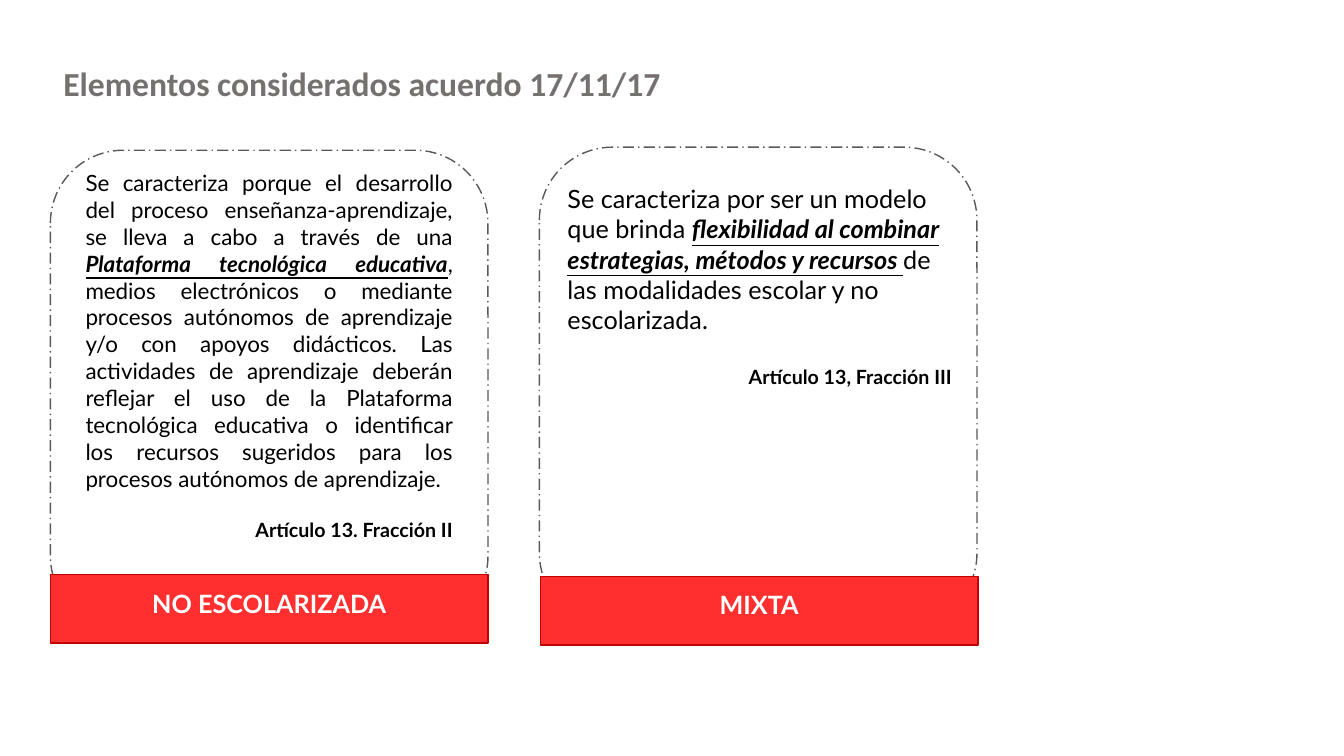
"""Build the slide comparing the two study modalities of agreement 17/11/17."""
import lxml.etree
import pptx
import pptx.dml.color
import pptx.enum.dml
import pptx.enum.shapes
import pptx.enum.text
import pptx.util
from pptx.util import Inches

ALIGN = pptx.enum.text.PP_ALIGN
SHAPE = pptx.enum.shapes.MSO_SHAPE
DASH = pptx.enum.dml.MSO_LINE
THEME = {
    "title": {"name": "Calibri", "size": 24, "color": "767171", "bold": True},
    "label": {"name": "Lato", "size": 18, "color": "FFFFFF", "bold": True},
    "body": {"name": "Lato", "color": "000000"},
    "emphasis": {"name": "Lato", "color": "000000", "bold": True, "italic": True, "underline": True},
    "citation": {"name": "Lato", "size": 14, "color": "000000", "bold": True},
    "card_line": "595959",
    "band_fill": "FF2F2F",
    "band_line": "C00000",
}
CARD_WIDTH, CARD_HEIGHT, BAND_HEIGHT = 4.34, 4.75, 0.68

modalities = [
    {
        "label": "NO ESCOLARIZADA",
        "card": (0.5, 1.49),
        "band": (0.5, 5.7),
        "label_top": 5.79,
        "text_box": (0.75, 1.63, 3.84, 4.11),
        "size": 16,
        "align": ALIGN.JUSTIFY,
        "gap": 19,
        "runs": [
            ("Se caracteriza porque el desarrollo del proceso enseñanza-aprendizaje, se lleva a cabo a través de una ", "body"),
            ("Plataforma tecnológica educativa", "emphasis"),
            (", medios electrónicos o mediante procesos autónomos de aprendizaje y/o con apoyos didácticos. "
             "Las actividades de aprendizaje deberán reflejar el uso de la Plataforma tecnológica educativa "
             "o identificar los recursos sugeridos para los procesos autónomos de aprendizaje.", "body"),
        ],
        "citation": "Artículo 13. Fracción II",
    },
    {
        "label": "MIXTA",
        "card": (5.35, 1.46),
        "band": (5.36, 5.72),
        "label_top": 5.8,
        "text_box": (5.53, 1.77, 4.01, 2.76),
        "size": 18,
        "align": ALIGN.LEFT,
        "gap": 21.5,
        "runs": [
            ("Se caracteriza por ser un modelo que brinda ", "body"),
            ("flexibilidad al combinar estrategias, métodos y recursos ", "emphasis"),
            ("de las modalidades escolar y no escolarizada.", "body"),
        ],
        "citation": "Artículo 13, Fracción III",
    },
]

presentation = pptx.Presentation()
presentation.slide_width = Inches(13.33)
presentation.slide_height = Inches(7.5)
slide = presentation.slides.add_slide(presentation.slide_layouts[6])


def add_text(box, paragraphs):
    """Add a wrapped text box from (alignment, gap before, runs) entries."""
    frame = slide.shapes.add_textbox(*map(Inches, box)).text_frame
    frame.word_wrap = True
    for index, (alignment, gap, runs) in enumerate(paragraphs):
        paragraph = frame.add_paragraph() if index else frame.paragraphs[0]
        paragraph.alignment = alignment
        if gap:
            paragraph.space_before = pptx.util.Pt(gap)
        for text, values in runs:
            run = paragraph.add_run()
            run.text = text
            for name, value in values.items():
                if name == "color":
                    run.font.color.rgb = pptx.dml.color.RGBColor.from_string(value)
                else:
                    setattr(run.font, name, pptx.util.Pt(value) if name == "size" else value)


def add_panel(kind, box, line, fill=None, dash=None):
    """Add an outlined shape, filled when a fill colour is given."""
    shape = slide.shapes.add_shape(kind, *map(Inches, box))
    shape.shadow.inherit = False
    if fill:
        shape.fill.solid()
        shape.fill.fore_color.rgb = pptx.dml.color.RGBColor.from_string(fill)
    else:
        shape.fill.background()
    shape.line.color.rgb = pptx.dml.color.RGBColor.from_string(line)
    shape.line.width = pptx.util.Pt(1)
    if dash:
        shape.line.dash_style = dash


add_text((0.53, 0.58, 9.65, 0.5),
         [(ALIGN.LEFT, 0, [("Elementos considerados acuerdo 17/11/17", THEME["title"])])])

for modality in modalities:
    add_panel(SHAPE.ROUNDED_RECTANGLE, (*modality["card"], CARD_WIDTH, CARD_HEIGHT),
              THEME["card_line"], dash=DASH.LONG_DASH_DOT)
    body_runs = [(text, {**THEME[style], "size": modality["size"]}) for text, style in modality["runs"]]
    add_text(modality["text_box"], [
        (modality["align"], 0, body_runs),
        (ALIGN.RIGHT, modality["gap"], [(modality["citation"], THEME["citation"])]),
    ])
    add_panel(SHAPE.RECTANGLE, (*modality["band"], CARD_WIDTH, BAND_HEIGHT),
              THEME["band_line"], fill=THEME["band_fill"])
    add_text((modality["band"][0], modality["label_top"], CARD_WIDTH, 0.4),
             [(ALIGN.CENTER, 0, [(modality["label"], THEME["label"])])])

presentation.save("out.pptx")
